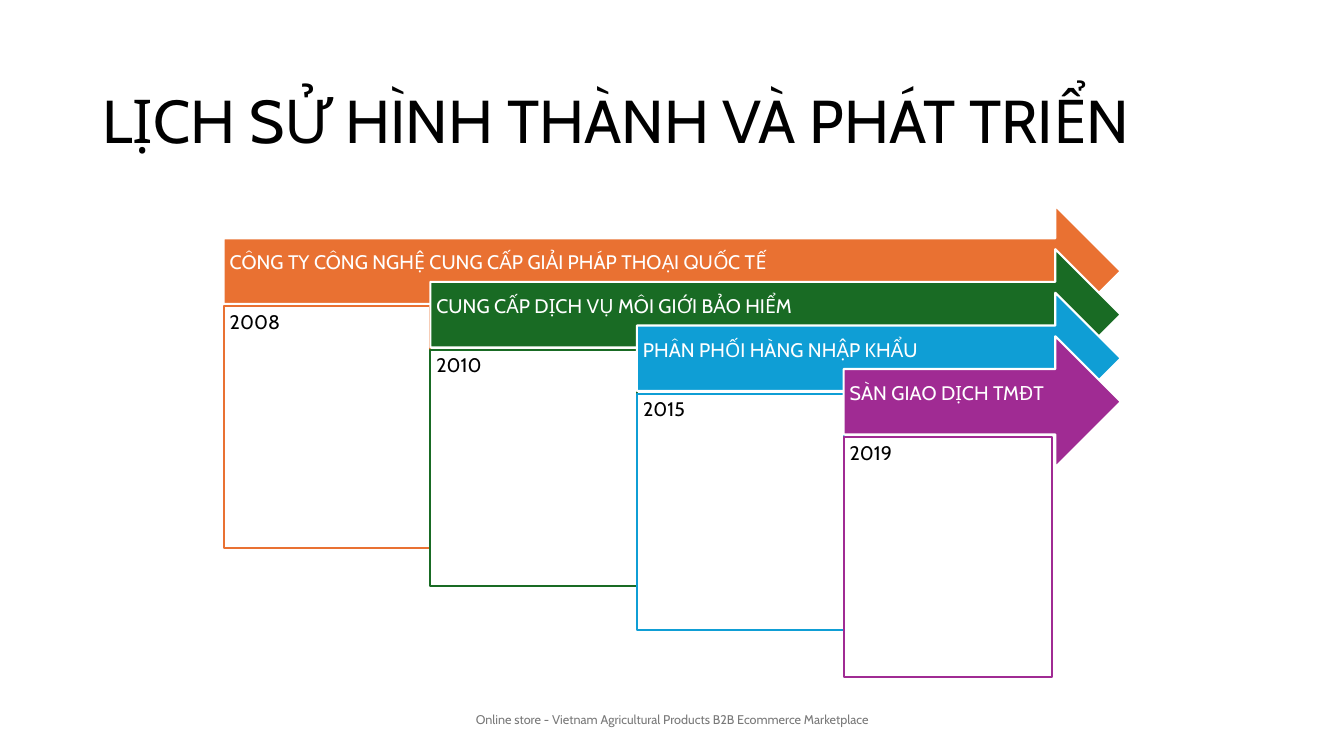
from pptx import Presentation
from pptx.dml.color import RGBColor
from pptx.enum.shapes import MSO_SHAPE as Preset
from pptx.enum.text import MSO_ANCHOR as Anchor, PP_ALIGN as Align
from pptx.util import Pt

FONT = "Cabin"
COLORS = {
    "black": "000000", "white": "FFFFFF", "gray": "797979",
    "orange": "E97132", "green": "196B24", "blue": "0F9ED5", "purple": "A02B93",
}
STAGES = [
    ("2008", "CÔNG TY CÔNG NGHỆ CUNG CẤP GIẢI PHÁP THOẠI QUỐC TẾ", "orange", 147.6, 172.8),
    ("2010", "CUNG CẤP DỊCH VỤ MÔI GIỚI BẢO HIỂM", "green", 147.6, 168.5),
    ("2015", "PHÂN PHỐI HÀNG NHẬP KHẨU", "blue", 147.6, 169.2),
    ("2019", "SÀN GIAO DỊCH TMĐT", "purple", 149, 171.4),
]
LEFT, TOP, RIGHT = 159.8, 146.9, 800.6
STEP_X, STEP_Y = 147.6, 31.1
ARROW_HEIGHT, BOX_DROP = 93.6, 72


def color(name):
    """Return the named colour."""
    return RGBColor.from_string(COLORS[name])


def write(shape, text, size, color_name, anchor, insets, align=Align.LEFT, after=0):
    """Fill a shape with one formatted paragraph."""
    frame = shape.text_frame
    frame.word_wrap = True
    frame.vertical_anchor = anchor
    frame.margin_left, frame.margin_top, frame.margin_right, frame.margin_bottom = map(Pt, insets)
    paragraph = frame.paragraphs[0]
    paragraph.alignment = align
    paragraph.line_spacing = 0.9
    paragraph.space_after = Pt(after)
    run = paragraph.add_run()
    run.text = text
    run.font.name = FONT
    run.font.size = Pt(size)
    run.font.color.rgb = color(color_name)


def add_block(shapes, preset, bounds, fill, line):
    """Add a filled and outlined preset shape."""
    shape = shapes.add_shape(preset, *map(Pt, bounds))
    shape.shadow.inherit = False
    shape.fill.solid()
    shape.fill.fore_color.rgb = color(fill)
    shape.line.color.rgb = color(line)
    shape.line.width = Pt(1.5)
    return shape


def add_title(slide, text):
    """Place and fill the title placeholder."""
    title = slide.shapes.title
    title.left, title.top, title.width, title.height = map(Pt, (66, 44, 828, 89))
    write(title, text, 43.2, "black", Anchor.MIDDLE, (7.2, 3.6, 7.2, 3.6))


def add_footer(slide, text):
    """Add the centred footer line."""
    footer = slide.shapes.add_textbox(*map(Pt, (318, 500.5, 324, 28.8)))
    write(footer, text, 9, "gray", Anchor.MIDDLE, (7.2, 3.6, 7.2, 3.6), Align.CENTER, 6)


def add_stage(shapes, index, year, label, accent, box_width, box_height):
    """Add one arrow of the history with its year box."""
    left, top = LEFT + index * STEP_X, TOP + index * STEP_Y
    arrow = add_block(shapes, Preset.RIGHT_ARROW,
                      (left, top, RIGHT - left, ARROW_HEIGHT), accent, "white")
    write(arrow, label, 14, "white", Anchor.MIDDLE, (4.3, 4.3, 20, 15), after=4.9)
    box = add_block(shapes, Preset.RECTANGLE,
                    (left, top + BOX_DROP, box_width, box_height), "white", accent)
    write(box, year, 14, "black", Anchor.TOP, (4.3, 4.3, 4.3, 4.3), after=4.9)


def main():
    """Build the company history slide."""
    presentation = Presentation()
    presentation.slide_width, presentation.slide_height = Pt(960), Pt(540)
    slide = presentation.slides.add_slide(presentation.slide_layouts[5])
    add_title(slide, "LỊCH SỬ HÌNH THÀNH VÀ PHÁT TRIỂN")
    add_footer(slide, "Online store - Vietnam Agricultural Products B2B Ecommerce Marketplace")
    timeline = slide.shapes.add_group_shape()
    for index, stage in enumerate(STAGES):
        add_stage(timeline.shapes, index, *stage)
    presentation.save("out.pptx")


if __name__ == "__main__":
    main()
